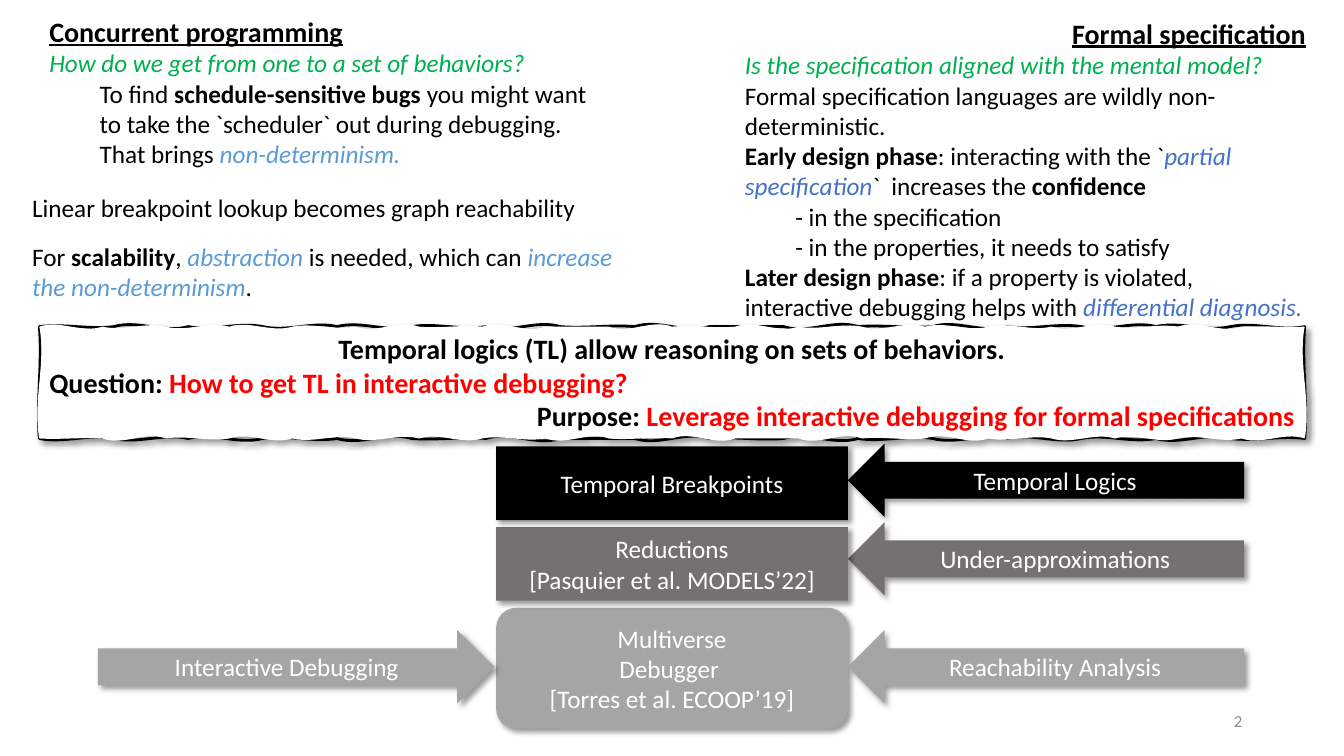
"""Build the slide that motivates temporal breakpoints in interactive debugging."""
import math

import lxml.etree
import pptx
import pptx.dml.color
import pptx.enum.shapes
import pptx.enum.text
import pptx.oxml
import pptx.oxml.ns
import pptx.util

Inches = pptx.util.Inches
RGBColor = pptx.dml.color.RGBColor
qn = pptx.oxml.ns.qn
SHAPE = pptx.enum.shapes.MSO_SHAPE
ANCHOR = pptx.enum.text.MSO_ANCHOR
LEFT = pptx.enum.text.PP_ALIGN.LEFT
CENTER = pptx.enum.text.PP_ALIGN.CENTER
RIGHT = pptx.enum.text.PP_ALIGN.RIGHT

BLACK = RGBColor(0x00, 0x00, 0x00)
WHITE = RGBColor(0xFF, 0xFF, 0xFF)
GREEN = RGBColor(0x00, 0xB0, 0x50)
SKY = RGBColor(0x5B, 0x9B, 0xD5)
BLUE = RGBColor(0x44, 0x72, 0xC4)
RED = RGBColor(0xFF, 0x00, 0x00)
DARK_GRAY = RGBColor(0x76, 0x71, 0x71)
LIGHT_GRAY = RGBColor(0xA5, 0xA5, 0xA5)
NUMBER_GRAY = RGBColor(0x8C, 0x8C, 0x8C)


def add_text(tf, paragraphs):
    """Fill a frame from (alignment, level, size, runs) paragraphs."""
    tf.word_wrap = True
    for i, (align, level, size, runs) in enumerate(paragraphs):
        p = tf.add_paragraph() if i else tf.paragraphs[0]
        p.alignment = align
        if level:
            p.level = level
            pPr = p._p.get_or_add_pPr()
            pPr.set("marL", str(Inches(0.5 * level)))
            pPr.set("indent", "0")
        for text, color, flags in runs:
            r = p.add_run()
            r.text = text
            r.font.name = "Calibri"
            r.font.size = pptx.util.Pt(size)
            r.font.color.rgb = color
            r.font.bold = "b" in flags
            r.font.italic = "i" in flags
            r.font.underline = "u" in flags


def style_shape(sp, fill):
    """Give a shape a solid fill and a soft shadow to the lower right."""
    sp.fill.solid()
    sp.fill.fore_color.rgb = fill
    sp.shadow.inherit = False
    effects = sp._element.spPr.find(qn("a:effectLst"))
    effects.append(pptx.oxml.parse_xml(
        f'<a:outerShdw {pptx.oxml.ns.nsdecls("a")} blurRad="50800" dist="38100" '
        'dir="2700000" algn="tl" rotWithShape="0">'
        '<a:srgbClr val="000000"><a:alpha val="40000"/></a:srgbClr></a:outerShdw>'))


prs = pptx.Presentation()
prs.slide_width = Inches(13.33)
prs.slide_height = Inches(7.5)
s = prs.slides.add_slide(prs.slide_layouts[6])

text_boxes = [
    ((0.39, 0.09, 5.65, 1.65), [
        (LEFT, 0, 20, [("Concurrent programming", BLACK, "bu")]),
        (LEFT, 0, 18, [("How do we get from one to a set of behaviors?", GREEN, "i")]),
        (LEFT, 1, 18, [
            ("To find ", BLACK, ""),
            ("schedule-sensitive bugs", BLACK, "b"),
            (" you might want to take the `scheduler` out during debugging.", BLACK, "")]),
        (LEFT, 1, 18, [("That brings ", BLACK, ""), ("non-determinism.", SKY, "i")])]),
    ((7.29, 0.11, 5.76, 3.16), [
        (RIGHT, 0, 20, [("Formal specification", BLACK, "bu")]),
        (LEFT, 0, 18, [("Is the specification aligned with the mental model?", GREEN, "i")]),
        (LEFT, 0, 18, [
            ("Formal specification languages are wildly non-deterministic.", BLACK, "")]),
        (LEFT, 0, 18, [
            ("Early design phase", BLACK, "b"),
            (": interacting with the `", BLACK, ""),
            ("partial specification", BLUE, "i"),
            ("`  increases the ", BLACK, ""),
            ("confidence", BLACK, "b")]),
        (LEFT, 1, 18, [("- in the specification", BLACK, "")]),
        (LEFT, 1, 18, [("- in the properties, it needs to satisfy", BLACK, "")]),
        (LEFT, 0, 18, [
            ("Later design phase", BLACK, "b"),
            (": if a property is violated, interactive debugging helps with ", BLACK, ""),
            ("differential diagnosis.", BLUE, "i")])]),
    ((-0.28, 2.34, 6.67, 0.71), [
        (LEFT, 1, 18, [
            ("For ", BLACK, ""),
            ("scalability", BLACK, "b"),
            (", ", BLACK, ""),
            ("abstraction", SKY, "i"),
            (" is needed, which can ", BLACK, ""),
            ("increase the non-determinism", SKY, "i"),
            (".", BLACK, "")])]),
    ((-0.28, 1.86, 6.81, 0.4), [
        (LEFT, 1, 18, [
            ("Linear breakpoint lookup becomes graph reachability", BLACK, "")])]),
    ((9.42, 6.95, 3, 0.4), [(RIGHT, 0, 12, [("2", NUMBER_GRAY, "")])]),
]
for box, paragraphs in text_boxes:
    tf = s.shapes.add_textbox(*map(Inches, box)).text_frame
    add_text(tf, paragraphs)
tf.vertical_anchor = ANCHOR.MIDDLE

blocks = [
    (SHAPE.LEFT_ARROW, (8.41, 4.4, 3.93, 0.73), BLACK, ["Temporal Logics"]),
    (SHAPE.ROUNDED_RECTANGLE, (4.92, 6.03, 3.49, 1.2), LIGHT_GRAY,
     ["Multiverse", "Debugger ", "[Torres et al. ECOOP’19]"]),
    (SHAPE.RIGHT_ARROW, (0.97, 6.25, 3.93, 0.73), LIGHT_GRAY, ["Interactive Debugging"]),
    (SHAPE.LEFT_ARROW, (8.41, 6.25, 3.93, 0.73), LIGHT_GRAY, ["Reachability Analysis"]),
    (SHAPE.LEFT_ARROW, (8.41, 5.18, 3.93, 0.73), DARK_GRAY, ["Under-approximations"]),
    (SHAPE.RECTANGLE, (4.92, 5.23, 3.49, 0.73), DARK_GRAY,
     ["Reductions", "[Pasquier et al. MODELS’22]"]),
    (SHAPE.RECTANGLE, (4.92, 4.43, 3.49, 0.73), BLACK, ["Temporal Breakpoints"]),
]
for kind, box, fill, lines in blocks:
    sp = s.shapes.add_shape(kind, *map(Inches, box))
    style_shape(sp, fill)
    sp.line.fill.background()
    sp.text_frame.vertical_anchor = ANCHOR.MIDDLE
    add_text(sp.text_frame, [(CENTER, 0, 18, [(line, WHITE, "")]) for line in lines])

left, top, width, height = map(Inches, (0.39, 3.24, 12.55, 1.11))
builder = s.shapes.build_freeform(left, top, scale=1.0)
builder.add_line_segments([
    (left + width, top), (left + width, top + height), (left, top + height)], close=True)
banner = builder.convert_to_shape()
style_shape(banner, WHITE)
banner.line.color.rgb = BLACK
banner.line.width = pptx.util.Pt(2)

path_list = next(banner._element.iter(qn("a:pathLst")))
path_list.clear()
corners = [(0, 0), (width, 0), (width, height), (0, height), (0, 0)]
for waves, phase, part in ((17, 0.4, "fill"), (20, 2.1, "stroke")):
    path = lxml.etree.SubElement(path_list, qn("a:path"), w=str(width), h=str(height))
    path.set(part, "none" if part == "fill" else "0")
    move = lxml.etree.SubElement(path, qn("a:moveTo"))
    lxml.etree.SubElement(move, qn("a:pt"), x="0", y="0")
    for (x0, y0), (x1, y1) in zip(corners, corners[1:]):
        count = waves if y0 == y1 else 1
        dx, dy = (x1 - x0) / count, (y1 - y0) / count
        for i in range(count):
            bulge = Inches(0.08) * math.sin(1.7 * i + phase)
            curve = lxml.etree.SubElement(path, qn("a:cubicBezTo"))
            for part_way, offset in ((0.33, -bulge), (0.67, bulge), (1, 0)):
                x = x0 + dx * (i + part_way) + (offset if dx == 0 else 0)
                y = y0 + dy * (i + part_way) + (offset if dy == 0 else 0)
                lxml.etree.SubElement(curve, qn("a:pt"), x=str(round(x)), y=str(round(y)))
    lxml.etree.SubElement(path, qn("a:close"))

banner.text_frame.vertical_anchor = ANCHOR.TOP
add_text(banner.text_frame, [
    (CENTER, 0, 20, [
        ("Temporal logics (TL) allow reasoning on sets of behaviors.", BLACK, "b")]),
    (LEFT, 0, 20, [
        ("Question:", BLACK, "b"),
        (" How to get TL in interactive debugging?", RED, "b")]),
    (RIGHT, 0, 20, [
        ("Purpose:", BLACK, "b"),
        (" Leverage interactive debugging for formal specifications", RED, "b")])])

prs.save("out.pptx")
